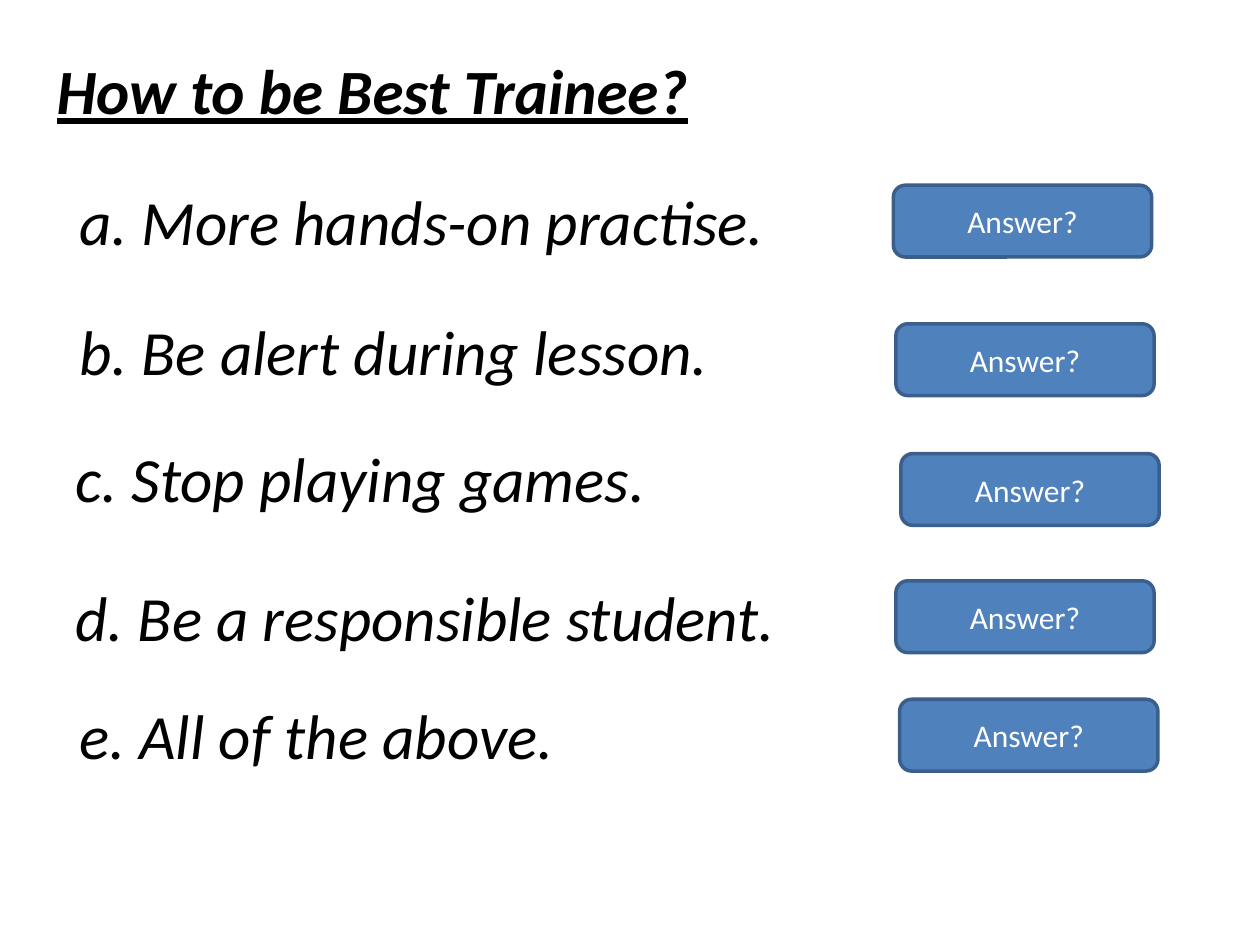
import pptx
import pptx.util
import pptx.dml.color
import pptx.enum.shapes
import pptx.enum.text

Inches = pptx.util.Inches
Pt = pptx.util.Pt

CHOICES = [
    ("a. More hands-on practise.", 0.53, 1.4, 7.09, 1.47),
    ("b. Be alert during lesson.", 0.53, 2.43, 7.11, 2.57),
    ("c. Stop playing games.", 0.5, 3.44, 7.15, 3.6),
    ("d. Be a responsible student.", 0.5, 4.54, 7.11, 4.61),
    ("e. All of the above.", 0.53, 5.48, 7.14, 5.55),
]


def color(code):
    return pptx.dml.color.RGBColor.from_string(code)


def add_run(para, text, size, code):
    run = para.add_run()
    run.text = text
    run.font.name = "Calibri"
    run.font.size = Pt(size)
    run.font.color.rgb = color(code)
    return run


def add_line(slide, text, left, top):
    box = slide.shapes.add_textbox(Inches(left), Inches(top), Inches(6.61), Inches(0.71))
    frame = box.text_frame
    frame.word_wrap = True
    frame.auto_size = pptx.enum.text.MSO_AUTO_SIZE.SHAPE_TO_FIT_TEXT
    run = add_run(frame.paragraphs[0], text, 36, "000000")
    run.font.italic = True
    return run


def add_title(slide, text, left, top):
    run = add_line(slide, text, left, top)
    run.font.bold = True
    run.font.underline = True


def add_button(slide, text, left, top):
    button = slide.shapes.add_shape(
        pptx.enum.shapes.MSO_SHAPE.ROUNDED_RECTANGLE,
        Inches(left), Inches(top), Inches(2.05), Inches(0.57))
    button.shadow.inherit = False
    button.fill.solid()
    button.fill.fore_color.rgb = color("4F81BD")
    button.line.color.rgb = color("3A5F8C")
    button.line.width = Pt(2)
    frame = button.text_frame
    frame.word_wrap = True
    frame.vertical_anchor = pptx.enum.text.MSO_ANCHOR.MIDDLE
    para = frame.paragraphs[0]
    para.alignment = pptx.enum.text.PP_ALIGN.CENTER
    add_run(para, text, 18, "FFFFFF")


def main():
    deck = pptx.Presentation()
    deck.slide_width = Inches(10)
    deck.slide_height = Inches(7.5)
    slide = deck.slides.add_slide(deck.slide_layouts[6])
    add_title(slide, "How to be Best Trainee?", 0.35, 0.36)
    for text, left, top, *_ in CHOICES:
        add_line(slide, text, left, top)
    for *_, left, top in CHOICES:
        add_button(slide, "Answer?", left, top)
    deck.save("out.pptx")


if __name__ == "__main__":
    main()
